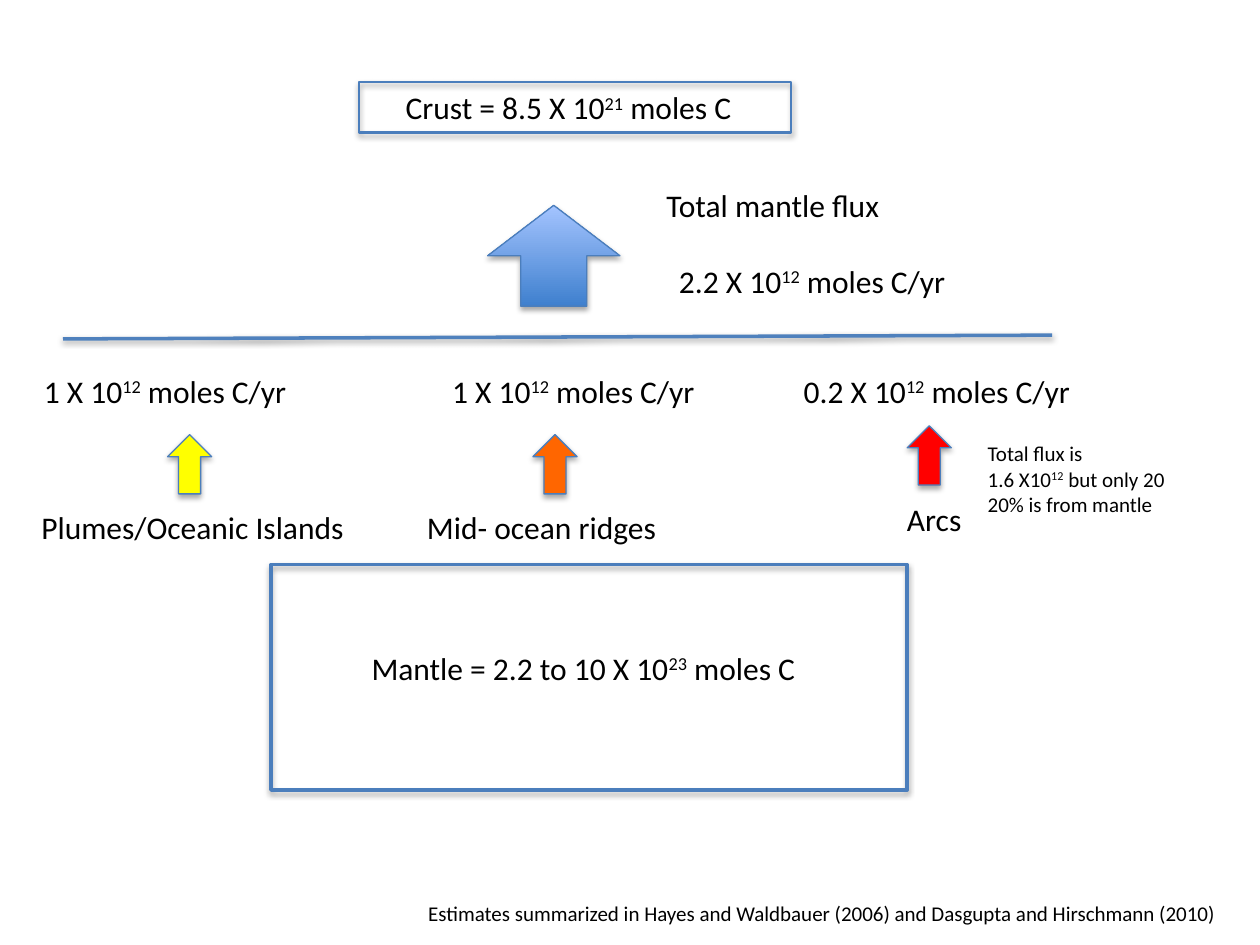
from lxml import etree
from pptx import Presentation, util as u
from pptx.dml.color import RGBColor
from pptx.enum import shapes, text
from pptx.oxml import ns

BLACK = RGBColor(0x00, 0x00, 0x00)
BLUE = RGBColor(0x4F, 0x81, 0xBD)
EDGE = RGBColor(0x4B, 0x7E, 0xBC)
DEEP = RGBColor(0x3F, 0x80, 0xCE)
PALE = RGBColor(0xA4, 0xC4, 0xFF)
YELLOW = RGBColor(0xFF, 0xFF, 0x00)
ORANGE = RGBColor(0xFF, 0x66, 0x00)
RED = RGBColor(0xFF, 0x00, 0x00)

deck = Presentation()
deck.slide_width, deck.slide_height = u.Inches(10), u.Inches(7.5)
slide = deck.slides.add_slide(deck.slide_layouts[6])


def shade(item, drop, alpha):
    props = item._element.spPr
    effect = props.find(ns.qn("a:effectLst"))
    if effect is None:
        effect = etree.SubElement(props, ns.qn("a:effectLst"))
    outer = etree.SubElement(effect, ns.qn("a:outerShdw"), blurRad="40000",
                             dist=str(drop), dir="5400000", rotWithShape="0")
    tint = etree.SubElement(outer, ns.qn("a:srgbClr"), val="000000")
    etree.SubElement(tint, ns.qn("a:alpha"), val=str(alpha))


def draw(kind, place, width):
    item = slide.shapes.add_shape(kind, *map(u.Inches, place))
    item.fill.background()
    item.line.color.rgb = EDGE
    item.line.width = u.Pt(width)
    item.shadow.inherit = False
    shade(item, 23000, 35000)
    return item


ends = map(u.Inches, (0.5, 2.69, 8.35, 2.66))
border = slide.shapes.add_connector(shapes.MSO_CONNECTOR.STRAIGHT, *ends)
border.line.color.rgb = BLUE
border.line.width = u.Pt(2)
shade(border, 20000, 38000)

flux = draw(shapes.MSO_SHAPE.UP_ARROW, (3.87, 1.63, 1.05, 0.8), 0.75)
flux.fill.gradient()
flux.fill.gradient_angle = 90
for stop, spot, color in zip(flux.fill.gradient_stops, (0, 1), (DEEP, PALE)):
    stop.position = spot
    stop.color.rgb = color

draw(shapes.MSO_SHAPE.RECTANGLE, (2.15, 4.48, 5.05, 1.79), 2)
draw(shapes.MSO_SHAPE.RECTANGLE, (2.85, 0.65, 3.43, 0.4), 1.5)

for left, top, color in ((1.33, 3.45, YELLOW), (4.23, 3.45, ORANGE), (7.2, 3.38, RED)):
    arrow = draw(shapes.MSO_SHAPE.UP_ARROW, (left, top, 0.35, 0.47), 0.75)
    arrow.fill.solid()
    arrow.fill.fore_color.rgb = color

labels = (
    (2.85, 5.1, 3.71, 0.4, 18, "Mantle = 2.2 to 10 X 10^23^ moles C"),
    (3.12, 0.65, 2.92, 0.4, 18, "Crust = 8.5 X 10^21^ moles C"),
    (5.29, 2.03, 2.45, 0.4, 18, "2.2 X 10^12^ moles C/yr"),
    (5.19, 1.43, 1.91, 0.4, 18, "Total mantle flux"),
    (3.29, 3.98, 2.04, 0.4, 18, "Mid- ocean ridges"),
    (7.1, 3.92, 0.64, 0.4, 18, "Arcs"),
    (0.23, 3.98, 2.63, 0.4, 18, "Plumes/Oceanic Islands"),
    (0.25, 2.9, 2.17, 0.4, 18, "1 X 10^12^ moles C/yr"),
    (6.28, 2.9, 2.36, 0.4, 18, "0.2 X 10^12^ moles C/yr"),
    (3.49, 2.9, 2.17, 0.4, 18, "1 X 10^12^ moles C/yr"),
    (7.74, 3.45, 1.69, 0.71, 12,
     "Total flux is\n1.6 X10^12^ but only 20\n20% is from mantle"),
    (3.3, 7.1, 6.52, 0.3, 12,
     "Estimates summarized in Hayes and Waldbauer (2006) "
     "and Dasgupta and Hirschmann (2010)"),
)
layout = {"word_wrap": False, "auto_size": text.MSO_AUTO_SIZE.SHAPE_TO_FIT_TEXT}

for *place, size, words in labels:
    frame = slide.shapes.add_textbox(*map(u.Inches, place)).text_frame
    for name, value in layout.items():
        setattr(frame, name, value)
    style = {"name": "Calibri", "size": u.Pt(size)}
    for row, line in enumerate(words.split("\n")):
        para = frame.add_paragraph() if row else frame.paragraphs[0]
        for part, piece in enumerate(line.split("^")):
            run = para.add_run()
            run.text = piece
            for name, value in style.items():
                setattr(run.font, name, value)
            run.font.color.rgb = BLACK
            if part % 2:
                run._r.get_or_add_rPr().set("baseline", "30000")

deck.save("out.pptx")
